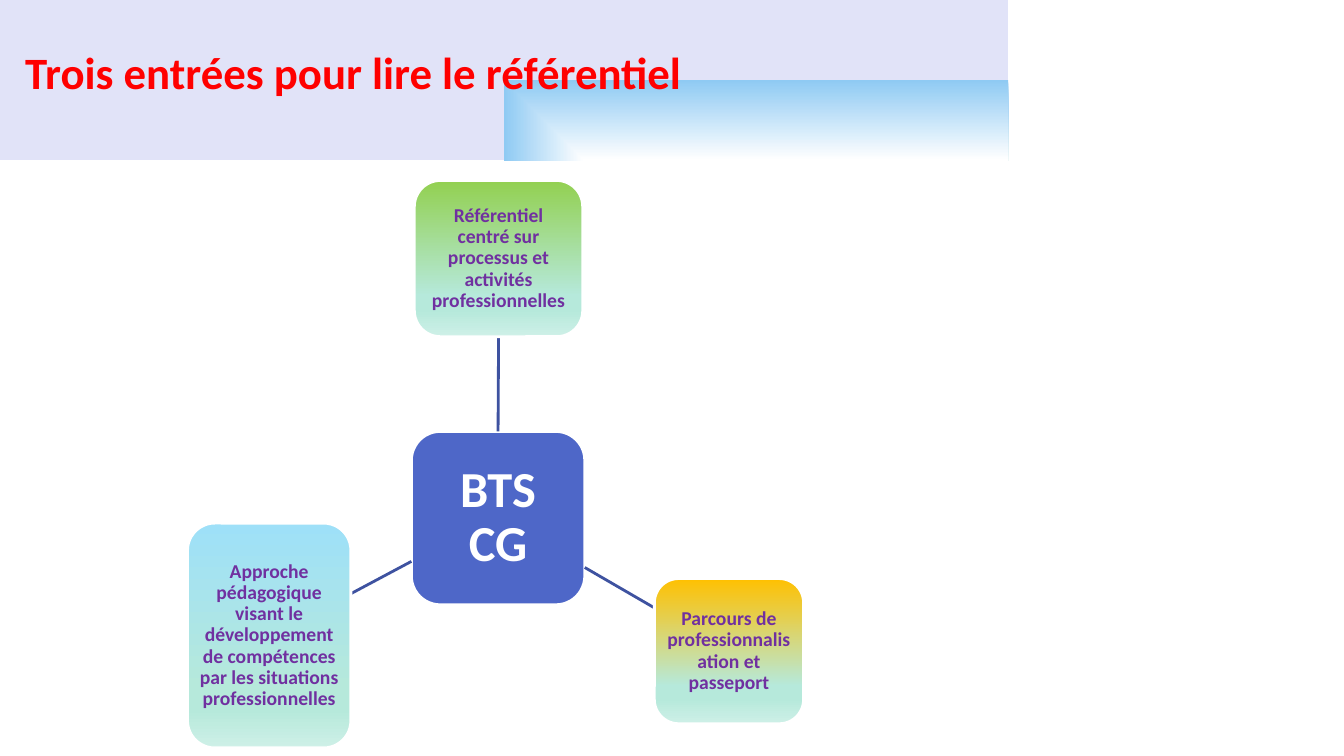
"""Build the slide showing three ways into the BTS CG reference framework."""
import pptx
import pptx.dml.color
import pptx.enum.shapes
import pptx.enum.text
import pptx.oxml
import pptx.oxml.ns
import pptx.util

Inches, Pt = pptx.util.Inches, pptx.util.Pt
RGB = pptx.dml.color.RGBColor
SHAPE = pptx.enum.shapes.MSO_SHAPE
ALIGN, ANCHOR = pptx.enum.text.PP_ALIGN, pptx.enum.text.MSO_ANCHOR

COLORS = {
    "white": "FFFFFF", "sky": "8FCAF3", "lilac": "C1C7F2", "band": "E1E3F8",
    "hub": "4E67C8", "link": "3E52A0", "title": "FF0000", "entry": "7030A0",
    "green": "92D050", "amber": "FFC000", "cyan": "9EE0F8",
    "mint": "B6E9DB", "pale": "CEF0E7",
}
TITLE = "Trois entrées pour lire le référentiel"
HUB = ("BTS CG", (4.08, 4.28, 1.72, 1.72))
ENTRIES = [
    {"text": "Référentiel centré sur processus et activités professionnelles",
     "box": (4.11, 1.79, 1.67, 1.55), "color": "green",
     "link": (4.94, 4.28, 4.94, 3.34), "sides": (0, 2)},
    {"text": "Parcours de professionnalisation et passeport",
     "box": (6.49, 5.74, 1.48, 1.44), "color": "amber",
     "link": (5.8, 5.63, 6.49, 6.03), "sides": None},
    {"text": "Approche pédagogique visant le développement de compétences "
             "par les situations professionnelles",
     "box": (1.86, 5.19, 1.62, 2.23), "color": "cyan",
     "link": (4.08, 5.57, 3.48, 5.89), "sides": None},
]
BAND_STOPS = [(0, "white"), (100, "sky"), (100, "lilac"), (100, "band")]
BAND_SHADE = '<a:path path="rect"><a:fillToRect l="100000" t="100000"/></a:path>'
ENTRY_SHADE = '<a:lin ang="5400000" scaled="0"/>'


def rgb(name):
    return RGB.from_string(COLORS[name])


def set_gradient(sp, stops, shade):
    gs = "".join(f'<a:gs pos="{pos * 1000}"><a:srgbClr val="{COLORS[name]}"/></a:gs>'
                 for pos, name in stops)
    ns = pptx.oxml.ns.nsdecls("a")
    grad = pptx.oxml.parse_xml(
        f'<a:gradFill {ns} rotWithShape="1"><a:gsLst>{gs}</a:gsLst>{shade}</a:gradFill>')
    sp.fill.background()
    old = sp.element.spPr.find(pptx.oxml.ns.qn("a:noFill"))
    sp.element.spPr.replace(old, grad)


def set_font(p, size, color):
    p.font.name, p.font.size, p.font.bold = "Calibri", Pt(size), True
    p.font.color.rgb = rgb(color)


def add_box(s, text, box, size, color, inset):
    sp = s.shapes.add_shape(SHAPE.ROUNDED_RECTANGLE, *map(Inches, box))
    sp.shadow.inherit = False
    sp.line.color.rgb, sp.line.width = rgb("white"), Pt(2)
    tf = sp.text_frame
    tf.word_wrap, tf.vertical_anchor = True, ANCHOR.MIDDLE
    tf.margin_left = tf.margin_right = tf.margin_top = tf.margin_bottom = Inches(inset)
    p = tf.paragraphs[0]
    p.text, p.alignment, p.line_spacing = text, ALIGN.CENTER, 0.9
    set_font(p, size, color)
    return sp


def add_link(s, ends):
    link = s.shapes.add_connector(
        pptx.enum.shapes.MSO_CONNECTOR.STRAIGHT, *map(Inches, ends))
    link.line.color.rgb, link.line.width = rgb("link"), Pt(2)
    link.element.spPr.append(
        pptx.oxml.parse_xml(f'<a:effectLst {pptx.oxml.ns.nsdecls("a")}/>'))
    return link


def main():
    prs = pptx.Presentation()
    prs.slide_width, prs.slide_height = Inches(13.33), Inches(7.5)
    s = prs.slides.add_slide(prs.slide_layouts[5])

    band = s.shapes.add_shape(SHAPE.RECTANGLE, 0, 0, Inches(10), Inches(1.59))
    band.shadow.inherit = False
    band.line.fill.background()
    set_gradient(band, BAND_STOPS, BAND_SHADE)

    hub = add_box(s, *HUB, 36, "white", 0.1)
    hub.fill.solid()
    hub.fill.fore_color.rgb = rgb("hub")

    for entry in ENTRIES:
        link = add_link(s, entry["link"])
        sp = add_box(s, entry["text"], entry["box"], 14, "entry", 0.04)
        set_gradient(sp, [(0, entry["color"]), (74, "mint"), (83, "mint"), (100, "pale")],
                     ENTRY_SHADE)
        if entry["sides"]:
            link.begin_connect(hub, entry["sides"][0])
            link.end_connect(sp, entry["sides"][1])

    title = s.shapes.title
    title.left, title.top = Inches(0.15), Inches(0.39)
    title.width, title.height = Inches(7.95), Inches(0.64)
    tf = title.text_frame
    tf.auto_size = pptx.enum.text.MSO_AUTO_SIZE.NONE
    p = tf.paragraphs[0]
    p.text, p.alignment = TITLE, ALIGN.LEFT
    set_font(p, 32, "title")
    title.element.getparent().append(title.element)

    prs.save("out.pptx")


if __name__ == "__main__":
    main()
